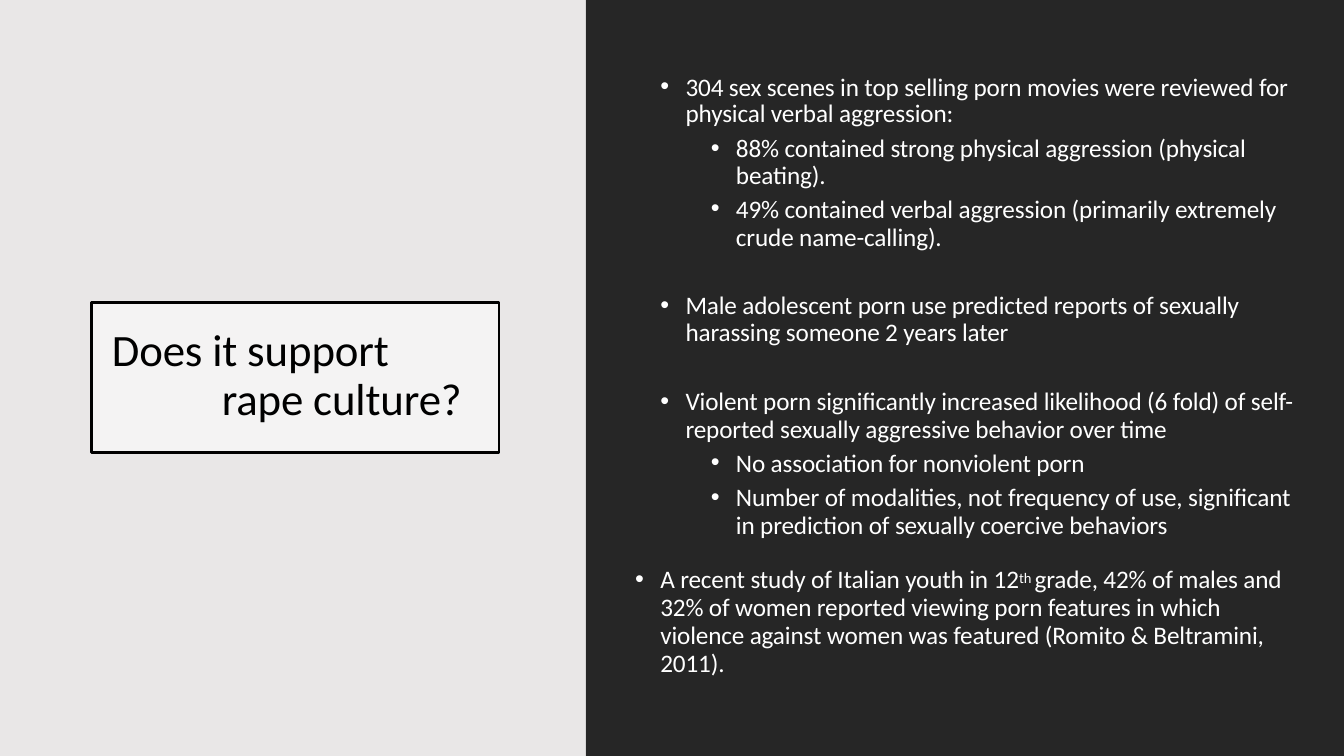
from lxml import etree
from pptx import Presentation
from pptx import util as u
from pptx.dml.color import RGBColor
from pptx.enum import shapes, text
from pptx.oxml.ns import qn

FONT = "Calibri"
BULLET_HANG = 0.25

FINDINGS = [
    ((6.54, 0.69, 6.36, 1.81), 0.05, [
        (0, 0.26, 19, 0, ["304 sex scenes in top selling porn movies were reviewed for "
                          "physical verbal aggression:"]),
        (1, 0.76, 19, 6.2, ["88% contained strong physical aggression (physical beating)."]),
        (1, 0.76, 19.9, 4.2, ["49% contained verbal aggression (primarily extremely "
                              "crude name-calling)."]),
    ]),
    ((6.54, 2.86, 5.87, 0.59), 0.05, [
        (0, 0.26, 19, 0, ["Male adolescent porn use predicted reports of sexually "
                          "harassing someone 2 years later"]),
    ]),
    ((6.29, 3.81, 6.64, 2.91), 0.04, [
        (0, 0.51, 19.9, 0, ["Violent porn significantly increased likelihood (6 fold) of "
                            "self-reported sexually aggressive behavior over time"]),
        (1, 1.01, 19.9, 4.1, ["No association for nonviolent porn"]),
        (1, 1.01, 19.9, 4.5, ["Number of modalities, not frequency of use, significant "
                              "in prediction of sexually coercive behaviors"]),
        (0, 0.26, 19.9, 19.1, ["A recent study of Italian youth in 12", "th ",
                               "grade, 42% of males and 32% of women reported viewing porn "
                               "features in which violence against women was featured "
                               "(Romito & Beltramini, 2011)."]),
    ]),
]


def color(value):
    return RGBColor.from_string(value)


def add_panel(slide, box, fill):
    panel = slide.shapes.add_shape(shapes.MSO_SHAPE.RECTANGLE, *map(u.Inches, box))
    panel.shadow.inherit = False
    panel.fill.solid()
    panel.fill.fore_color.rgb = color(fill)
    panel.line.fill.background()
    return panel


def set_frame(frame, top_inset):
    frame.word_wrap = True
    frame.margin_left = frame.margin_right = frame.margin_bottom = 0
    frame.margin_top = u.Inches(top_inset)
    frame.vertical_anchor = text.MSO_ANCHOR.TOP


def set_indent(paragraph, left, hang):
    properties = paragraph._p.get_or_add_pPr()
    properties.set("marL", str(u.Inches(left)))
    properties.set("indent", str(u.Inches(-hang)))
    return properties


def format_run(run, size, fill):
    run.font.name = FONT
    run.font.size = u.Pt(size)
    run.font.color.rgb = color(fill)
    run._r.get_or_add_rPr().set("spc", "-10")


def add_title(slide, box):
    title = add_panel(slide, box, "FFFFFF")
    fill = title._element.spPr.find(qn("a:solidFill"))
    etree.SubElement(fill[0], qn("a:alpha"), val="50000")
    title.line.color.rgb = color("000000")
    title.line.width = u.Pt(2)
    set_frame(title.text_frame, 0.24)
    paragraph = title.text_frame.paragraphs[0]
    paragraph.text = "Does it support\vrape culture?"
    paragraph.alignment = text.PP_ALIGN.LEFT
    paragraph.line_spacing = u.Pt(35)
    set_indent(paragraph, 1.29, 1.09)
    for run in paragraph.runs:
        format_run(run, 32, "000000")


def add_findings(slide, box, top_inset, items):
    frame = slide.shapes.add_textbox(*map(u.Inches, box)).text_frame
    set_frame(frame, top_inset)
    for index, (level, left, line, before, parts) in enumerate(items):
        paragraph = frame.add_paragraph() if index else frame.paragraphs[0]
        paragraph.level = level
        paragraph.line_spacing = u.Pt(line)
        paragraph.space_before = u.Pt(before)
        properties = set_indent(paragraph, left, BULLET_HANG)
        etree.SubElement(properties, qn("a:buFont"), typeface="Arial")
        etree.SubElement(properties, qn("a:buChar"), char="•")
        for part in parts:
            run = paragraph.add_run()
            run.text = part
            format_run(run, 18, "FFFFFF")
            if part == "th ":
                run._r.get_or_add_rPr().set("baseline", "23000")


def main():
    presentation = Presentation()
    presentation.slide_width = u.Inches(13.33)
    presentation.slide_height = u.Inches(7.5)
    slide = presentation.slides.add_slide(presentation.slide_layouts[6])
    add_panel(slide, (0, 0, 5.81, 7.5), "E9E7E7")
    add_panel(slide, (5.81, 0, 7.52, 7.5), "262626")
    add_title(slide, (0.91, 3, 4.04, 1.49))
    for box, top_inset, items in FINDINGS:
        add_findings(slide, box, top_inset, items)
    presentation.save("out.pptx")


if __name__ == "__main__":
    main()
